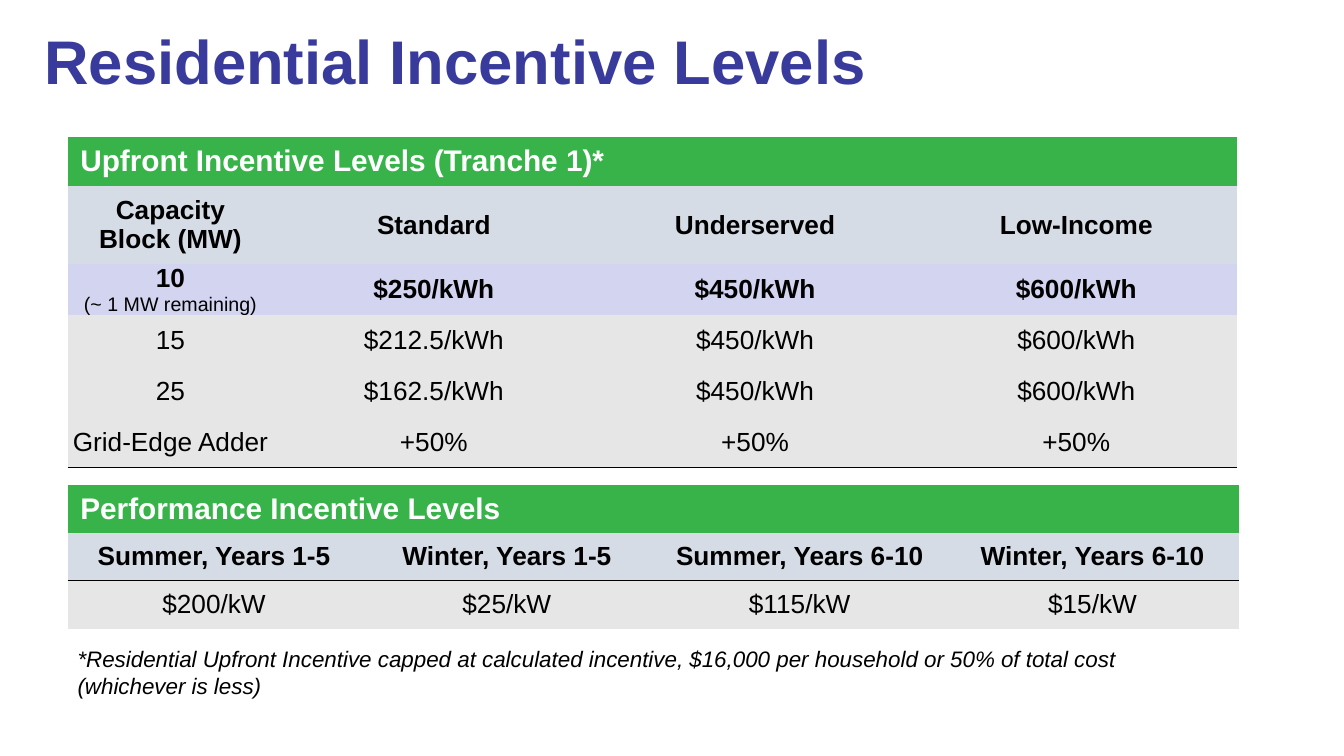
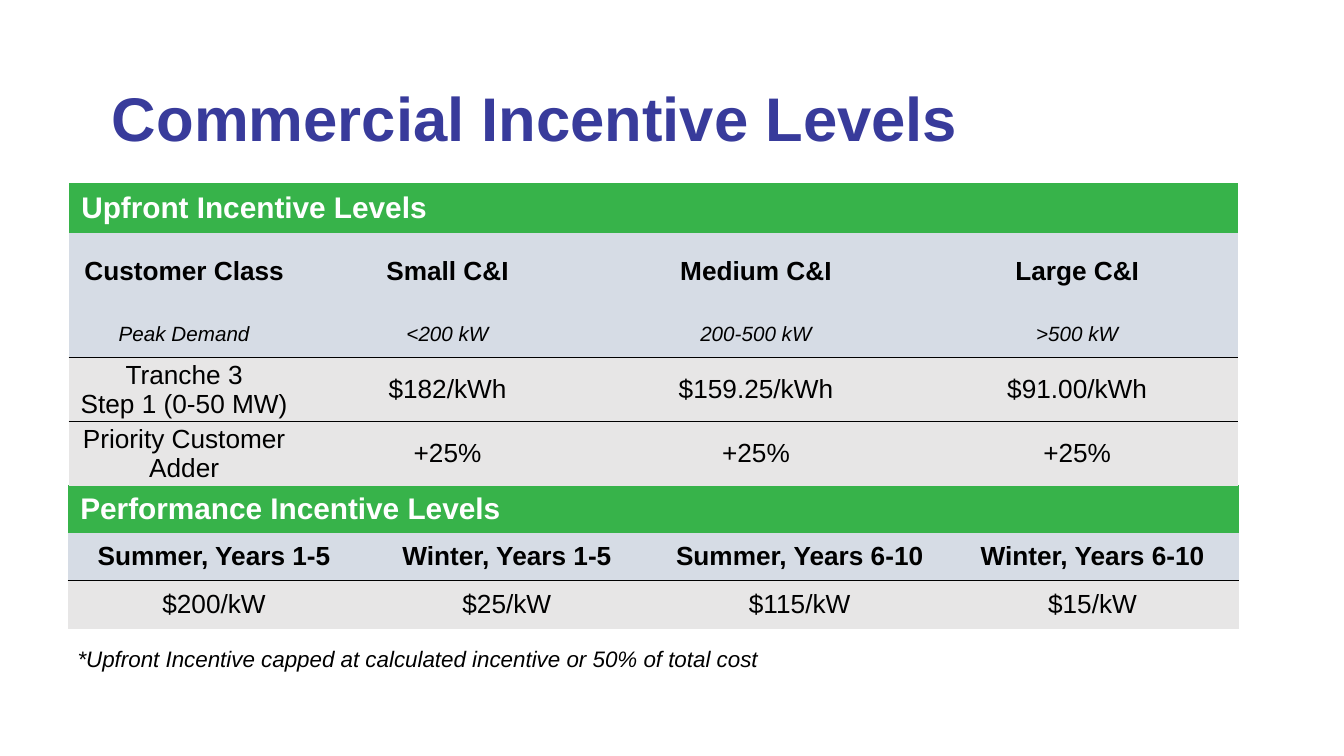
from lxml.etree import SubElement
from pptx import Presentation
from pptx.dml.color import RGBColor as RGB
from pptx.enum.text import MSO_ANCHOR as ANCHOR, MSO_AUTO_SIZE as FIT, PP_ALIGN as ALIGN
from pptx.oxml import parse_xml
from pptx.oxml.ns import nsdecls, qn
from pptx.util import Inches, Pt

COLORS = {
    "title": "383B9B",
    "banner": "37B34A",
    "head": "D6DCE5",
    "current": "D3D4EF",
    "plain": "E7E6E6",
    "white": "FFFFFF",
    "ink": "000000",
}
FONTS = {
    "title": {"size": Pt(44), "bold": True},
    "banner": {"size": Pt(21.3), "bold": True},
    "head": {"size": Pt(18.7), "bold": True},
    "sub": {"size": Pt(14.7), "italic": True},
    "current": {"size": Pt(18.7), "bold": True},
    "small": {"size": Pt(14), "bold": False},
    "plain": {"size": Pt(18.7), "bold": False},
    "note": {"size": Pt(16), "italic": True},
}
ROWS = {
    "banner": {"fill": "banner", "ink": "white", "align": ALIGN.LEFT, "padded": True},
    "head": {"fill": "head", "ink": "ink", "align": ALIGN.CENTER, "padded": True},
    "sub": {"fill": "head", "ink": "ink", "align": ALIGN.CENTER, "padded": True},
    "current": {"fill": "current", "ink": "ink", "align": ALIGN.CENTER, "padded": False},
    "plain": {"fill": "plain", "ink": "ink", "align": ALIGN.CENTER, "padded": False},
}
NO_GRID = "{2D5ABB26-0587-4C30-8999-92F81FD0307C}"
LEFT = 5.03
PERFORMANCE = [
    ("banner", 6.4, ["Performance Incentive Levels"], False),
    ("head", 6.27, ["Summer, Years 1-5", "Winter, Years 1-5",
                    "Summer, Years 6-10", "Winter, Years 6-10"], True),
    ("plain", 6.4, ["$200/kW", "$25/kW", "$115/kW", "$15/kW"], False),
]
RESIDENTIAL = [
    ("banner", 6.53, ["Upfront Incentive Levels (Tranche 1)*"], False),
    ("head", 10.27, ["Capacity Block (MW)", "Standard", "Underserved", "Low-Income"], False),
    ("current", 6.7, ["10\n(~ 1 MW remaining)", "$250/kWh", "$450/kWh", "$600/kWh"], False),
    ("plain", 6.7, ["15", "$212.5/kWh", "$450/kWh", "$600/kWh"], False),
    ("plain", 6.7, ["25", "$162.5/kWh", "$450/kWh", "$600/kWh"], False),
    ("plain", 6.7, ["Grid-Edge Adder"] + ["+50%"] * 3, True),
]
COMMERCIAL = [
    ("banner", 6.53, ["Upfront Incentive Levels"], False),
    ("head", 10.27, ["Customer Class", "Small C&I", "Medium C&I", "Large C&I"], False),
    ("sub", 6.27, ["Peak Demand", "<200 kW", "200-500 kW", ">500 kW"], True),
    ("plain", 8.45, ["Tranche 3\nStep 1 (0-50 MW)", "$182/kWh", "$159.25/kWh", "$91.00/kWh"], True),
    ("plain", 8.45, ["Priority Customer Adder"] + ["+25%"] * 3, False),
]


class Deck:
    def __init__(self):
        self.prs = Presentation()
        self.prs.slide_width, self.prs.slide_height = Inches(13.33), Inches(7.5)
        self.slide = None

    def x(self, share):
        return int(self.prs.slide_width * share / 100)

    def y(self, share):
        return int(self.prs.slide_height * share / 100)

    def run(self, p, text, style, color):
        r = p.add_run()
        r.text = text
        for name, value in {"name": "Arial", **FONTS[style]}.items():
            setattr(r.font, name, value)
        r.font.color.rgb = RGB.from_string(COLORS[color])

    def title(self, text, left, top):
        self.slide = self.prs.slides.add_slide(self.prs.slide_layouts[5])
        sp = self.slide.shapes.title
        box = {"left": self.x(left), "top": self.y(top),
               "width": self.x(86.27), "height": self.y(13.73)}
        for name, value in box.items():
            setattr(sp, name, value)
        tf = sp.text_frame
        tf.auto_size, tf.vertical_anchor = FIT.NONE, ANCHOR.MIDDLE
        p = tf.paragraphs[0]
        p.alignment, p.line_spacing = ALIGN.LEFT, 0.9
        p._p.get_or_add_pPr().set("marL", str(Inches(0.34)))
        self.run(p, text, "title", "title")

    def note(self, text, height):
        sp = self.slide.shapes.add_textbox(
            self.x(LEFT), self.y(84.67), self.x(86.35), self.y(height))
        sp.text_frame.word_wrap = True
        self.run(sp.text_frame.paragraphs[0], text, "note", "ink")

    def rule(self, cell, side):
        ln = parse_xml(f'<a:ln{side} {nsdecls("a")} w="{Pt(1)}"/>')
        fill = SubElement(ln, qn("a:solidFill"))
        SubElement(fill, qn("a:srgbClr")).set("val", COLORS["ink"])
        cell._tc.get_or_add_tcPr().insert(0, ln)

    def cell(self, cell, text, kind):
        row = ROWS[kind]
        pad_x, pad_y = (self.x(0.95), self.y(0.8)) if row["padded"] else (0, 0)
        layout = {"margin_left": pad_x, "margin_right": pad_x, "margin_top": pad_y,
                  "margin_bottom": pad_y, "vertical_anchor": ANCHOR.MIDDLE}
        for name, value in layout.items():
            setattr(cell, name, value)
        cell.fill.solid()
        cell.fill.fore_color.rgb = RGB.from_string(COLORS[row["fill"]])
        tf = cell.text_frame
        for i, line in enumerate(text.split("\n")):
            p = tf.add_paragraph() if i else tf.paragraphs[0]
            p.alignment = row["align"]
            self.run(p, line, "small" if i and kind == "current" else kind, row["ink"])

    def table(self, top, columns, rows, left=LEFT):
        height = sum(row[1] for row in rows)
        tbl = self.slide.shapes.add_table(
            len(rows), len(columns), self.x(left), self.y(top),
            self.x(sum(columns)), self.y(height)).table
        tbl.first_row = tbl.horz_banding = False
        tbl._tbl.tblPr.find(qn("a:tableStyleId")).text = NO_GRID
        for column, width in zip(tbl.columns, columns):
            column.width = self.x(width)
        ruled_above = False
        for i, (kind, share, texts, ruled) in enumerate(rows):
            tbl.rows[i].height = self.y(share)
            if kind == "banner":
                tbl.cell(i, 0).merge(tbl.cell(i, len(columns) - 1))
            for j, text in enumerate(texts):
                cell = tbl.cell(i, j)
                self.cell(cell, text, kind)
                for side, wanted in (("B", ruled), ("T", ruled_above)):
                    if wanted:
                        self.rule(cell, side)
            ruled_above = ruled

    def performance(self):
        self.table(64.13, [21.79] * 4, PERFORMANCE)


def main():
    deck = Deck()
    deck.title("Residential Incentive Levels", 0, 1.73)
    deck.table(18.13, [15.3] + [23.9] * 3, RESIDENTIAL)
    deck.performance()
    deck.note("*Residential Upfront Incentive capped at calculated incentive, $16,000 per "
              "household or 50% of total cost (whichever is less)", 8.53)

    deck.title("Commercial Incentive Levels", LEFT, 9.2)
    deck.performance()
    deck.note("*Upfront Incentive capped at calculated incentive or 50% of total cost", 4.93)
    deck.table(24.27, [17.2, 22, 23.9, 23.9], COMMERCIAL, left=5.1)
    deck.prs.save("out.pptx")


if __name__ == "__main__":
    main()
